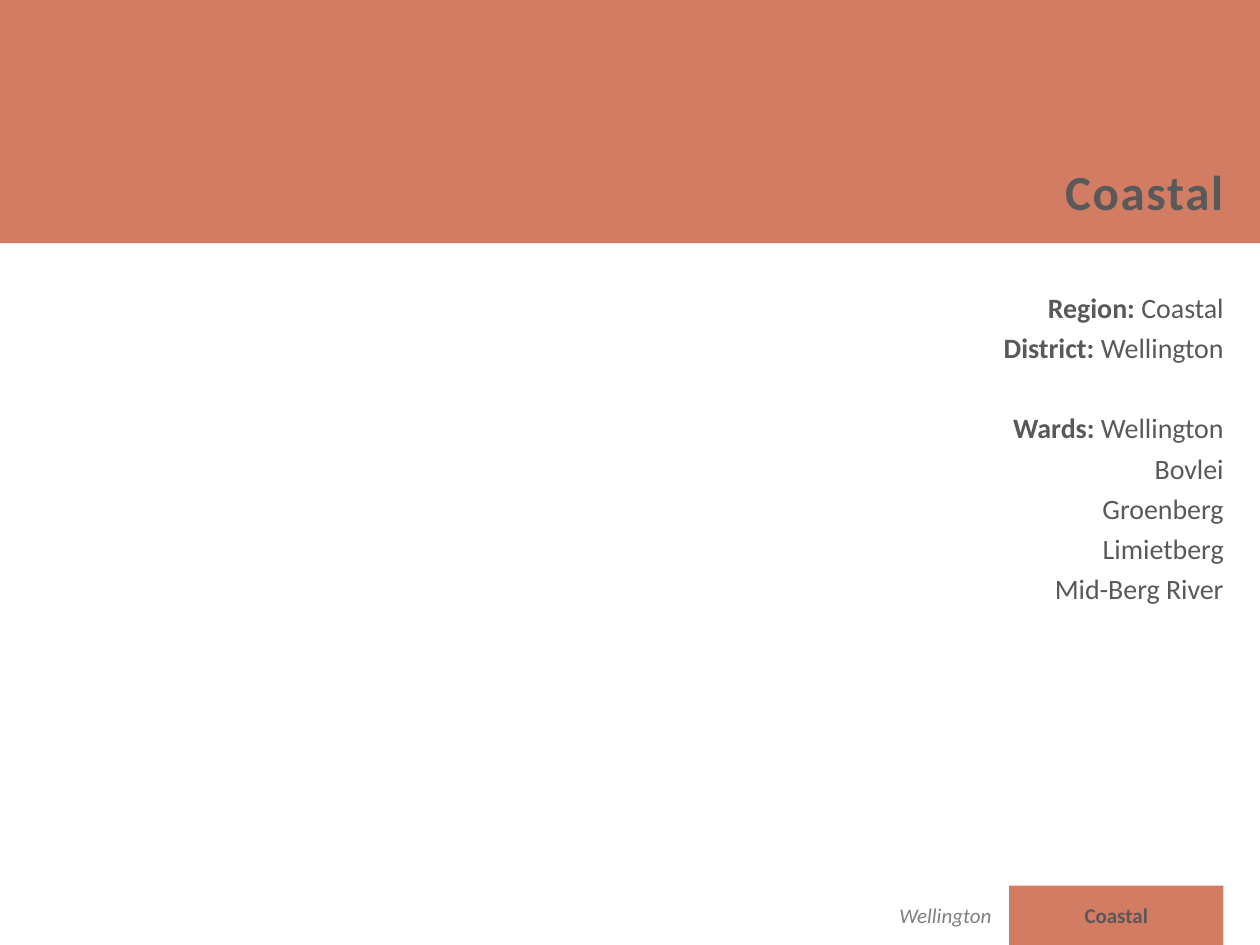
from pptx import Presentation
from pptx.dml.color import RGBColor
from pptx.enum.shapes import MSO_SHAPE
from pptx.enum.text import MSO_ANCHOR, PP_ALIGN
from pptx.util import Inches, Pt

RECT = MSO_SHAPE.RECTANGLE
RIGHT, CENTER = PP_ALIGN.RIGHT, PP_ALIGN.CENTER
MIDDLE, TOP = MSO_ANCHOR.MIDDLE, MSO_ANCHOR.TOP
TITLE_ONLY = 5

THEME = {
    "font": "Calibri",
    "band": RGBColor(0xD1, 0x7C, 0x63),
    "paper": RGBColor(0xFF, 0xFF, 0xFF),
    "text": RGBColor(0x59, 0x59, 0x59),
    "muted": RGBColor(0x80, 0x80, 0x80),
    "title_size": Pt(28),
    "body_size": Pt(16),
    "footer_size": Pt(12),
}
W, H = Inches(10), Inches(7.5)
INSET = Inches(0.1)
RIGHT_EDGE = Inches(9.71)
TILE_W, TILE_H = Inches(1.7), Inches(0.47)


def add_run(p, text, size, color=THEME["text"], **style):
    r = p.add_run()
    r.text = text
    r.font.color.rgb = color
    for name, value in {"name": THEME["font"], "size": size, **style}.items():
        setattr(r.font, name, value)
    return r


def add_block(left, top, width, height, fill):
    sp = s.shapes.add_shape(RECT, left, top, width, height)
    sp.shadow.inherit = False
    sp.fill.solid()
    sp.fill.fore_color.rgb = fill
    sp.line.fill.background()
    return sp


prs = Presentation()
prs.slide_width, prs.slide_height = W, H
s = prs.slides.add_slide(prs.slide_layouts[TITLE_ONLY])

# Header band with the title in front of it
band = add_block(0, 0, W, Inches(1.93), THEME["band"])
title = s.shapes.title
band.element.addnext(title.element)
frame = {"left": RIGHT_EDGE + INSET - W // 2, "top": Inches(1.23),
         "width": W // 2, "height": Inches(0.57)}
for name, value in frame.items():
    setattr(title, name, value)
title.text_frame.vertical_anchor = MIDDLE
p = title.text_frame.paragraphs[0]
p.alignment = RIGHT
r = add_run(p, "Coastal", THEME["title_size"], bold=True)
r.font._element.set("spc", "100")

# Origin details: label, value, space before
details = [
    ("Region: ", "Coastal", 0),
    ("District: ", "Wellington", 0),
    ("Wards: ", "Wellington", 23),
    ("", "Bovlei", 0),
    ("", "Groenberg", 0),
    ("", "Limietberg", 0),
    ("", "Mid-Berg River", 0),
]
body_w = Inches(3.12)
body = s.shapes.add_textbox(RIGHT_EDGE + INSET - body_w, Inches(2.2),
                            body_w, Inches(2.68))
tf = body.text_frame
tf.word_wrap = True
tf.vertical_anchor = TOP
for i, (label, value, gap) in enumerate(details):
    p = tf.add_paragraph() if i else tf.paragraphs[0]
    p.alignment = RIGHT
    p.line_spacing = 1.2
    if gap:
        p.space_before = Pt(gap)
    if label:
        add_run(p, label, THEME["body_size"], bold=True)
    add_run(p, value, THEME["body_size"], bold=False)

# Footer tiles, ending at the right edge: district, then region
tiles = [
    ("Wellington", THEME["paper"], THEME["muted"], RIGHT, {"italic": True}),
    ("Coastal", THEME["band"], THEME["text"], CENTER, {"bold": True}),
]
for i, (text, fill, color, align, style) in enumerate(tiles):
    left = RIGHT_EDGE - (len(tiles) - i) * TILE_W
    sp = add_block(left, H - TILE_H, TILE_W, TILE_H, fill)
    tf = sp.text_frame
    tf.vertical_anchor = MIDDLE
    tf.margin_left = tf.margin_right = Inches(0.14)
    p = tf.paragraphs[0]
    p.alignment = align
    add_run(p, text, THEME["footer_size"], color, **style)

prs.save("out.pptx")
